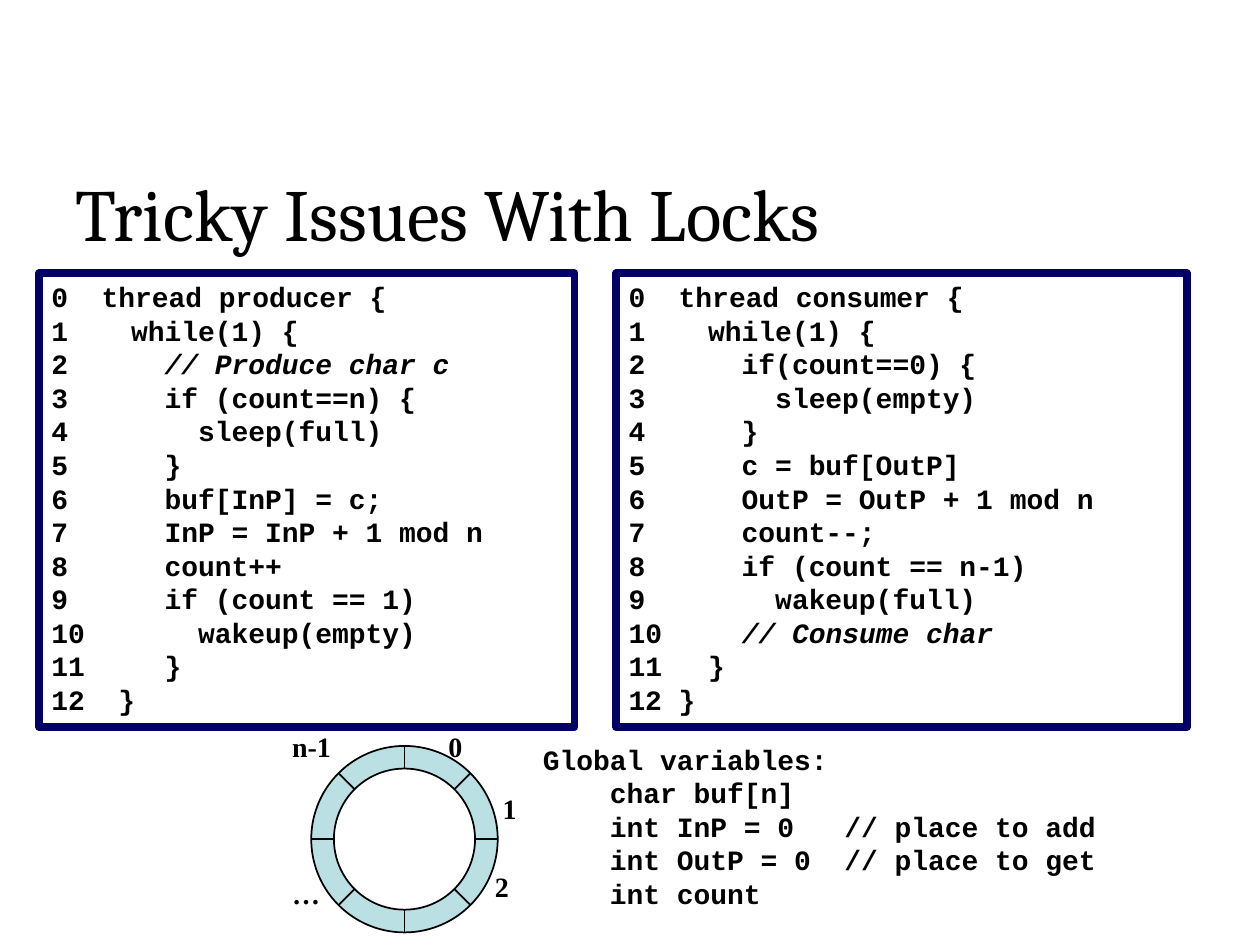
import math
from dataclasses import dataclass

from lxml import etree
from pptx import Presentation
from pptx import util as u
from pptx.dml.color import RGBColor
from pptx.enum import shapes, text
from pptx.oxml.ns import qn


@dataclass(frozen=True)
class Theme:
    ink: RGBColor = RGBColor.from_string("000000")
    frame: RGBColor = RGBColor.from_string("000066")
    ring: RGBColor = RGBColor.from_string("BBE0E3")
    paper: RGBColor = RGBColor.from_string("FFFFFF")
    title_font: str = "Cambria"
    code_font: str = "Courier New"
    label_font: str = "Times New Roman"
    title_size: int = 42
    body_size: int = 16
    frame_width: float = 4.5
    thin_width: float = 1


T = Theme()


def write_text(sp, content, font=T.code_font, size=T.body_size, bold=True,
               anchor=text.MSO_ANCHOR.TOP, spacing=None, numbered=False):
    tf = sp.text_frame
    tf.word_wrap = True
    tf.vertical_anchor = anchor
    lines = content.split("\n")
    for i, line in enumerate(lines):
        p = tf.paragraphs[0] if i == 0 else tf.add_paragraph()
        p.alignment = text.PP_ALIGN.LEFT
        if spacing:
            p.line_spacing = spacing
        pieces = [line]
        if numbered:
            pPr = p._p.get_or_add_pPr()
            pPr.set("marL", str(u.Inches(0.5)))
            pPr.set("indent", str(u.Inches(-0.5)))
            if 0 < i < len(lines) - 1:
                etree.SubElement(pPr, qn("a:buFontTx"))
                etree.SubElement(pPr, qn("a:buAutoNum"), type="arabicPlain")
            code, slashes, comment = line.partition("//")
            pieces = [code, slashes + comment]
        for j, piece in enumerate(pieces):
            if piece:
                r = p.add_run()
                r.text = piece
                r.font.name = font
                r.font.size = u.Pt(size)
                r.font.bold = bold
                r.font.italic = j == 1
                r.font.color.rgb = T.ink


def add_shape(kind, x, y, w, h, fill, line, width):
    sp = s.shapes.add_shape(kind, u.Inches(x), u.Inches(y), u.Inches(w), u.Inches(h))
    sp.shadow.inherit = False
    if fill is None:
        sp.fill.background()
    else:
        sp.fill.solid()
        sp.fill.fore_color.rgb = fill
    sp.line.color.rgb = line
    sp.line.width = u.Pt(width)
    return sp


PRODUCER = """0  thread producer {
 while(1) {
   // Produce char c
   if (count==n) {
     sleep(full)
   }
   buf[InP] = c;
   InP = InP + 1 mod n
   count++
   if (count == 1)
     wakeup(empty)
   }
12  }"""

CONSUMER = """0  thread consumer {
 while(1) {
   if(count==0) {
     sleep(empty)
   }
   c = buf[OutP]
   OutP = OutP + 1 mod n
   count--;
   if (count == n-1)
     wakeup(full)
   // Consume char
 }
12 }"""

GLOBALS = """Global variables:
    char buf[n]
    int InP = 0   // place to add
    int OutP = 0  // place to get
    int count"""

prs = Presentation()
prs.slide_width = u.Inches(10)
prs.slide_height = u.Inches(7.5)
s = prs.slides.add_slide(prs.slide_layouts[6])

title = s.shapes.add_textbox(u.Inches(0.5), u.Inches(1.35), u.Inches(7.92), u.Inches(0.75))
write_text(title, "Tricky Issues With Locks", font=T.title_font, size=T.title_size,
           bold=False, anchor=text.MSO_ANCHOR.MIDDLE, spacing=0.9)

for code, x, w in [(CONSUMER, 4.89, 4.53), (PRODUCER, 0.31, 4.25)]:
    box = add_shape(shapes.MSO_SHAPE.RECTANGLE, x, 2.17, w, 3.6, None, T.frame, T.frame_width)
    write_text(box, code, numbered=True)

cx, cy, outer, inner = 3.21, 6.66, 0.74, 0.56
add_shape(shapes.MSO_SHAPE.OVAL, cx - outer, cy - outer, 2 * outer, 2 * outer,
          T.ring, T.ink, T.thin_width)
for k in range(4):
    dx = outer * math.cos(k * math.pi / 4)
    dy = outer * math.sin(k * math.pi / 4)
    spoke = s.shapes.add_connector(shapes.MSO_CONNECTOR.STRAIGHT,
                                   u.Inches(cx - dx), u.Inches(cy - dy),
                                   u.Inches(cx + dx), u.Inches(cy + dy))
    spoke.line.color.rgb = T.ink
    spoke.line.width = u.Pt(T.thin_width)
    etree.SubElement(spoke._element.spPr, qn("a:effectLst"))
add_shape(shapes.MSO_SHAPE.OVAL, cx - inner, cy - inner, 2 * inner, 2 * inner,
          T.paper, T.ink, T.thin_width)

for label, x, y, w in [("0", 3.46, 5.74, 0.49), ("1", 3.89, 6.23, 0.49),
                       ("2", 3.83, 6.85, 0.49), ("n-1", 2.22, 5.74, 0.81),
                       ("…", 2.22, 6.91, 0.49)]:
    tag = s.shapes.add_textbox(u.Inches(x), u.Inches(y), u.Inches(w), u.Inches(0.37))
    write_text(tag, label, font=T.label_font)

variables = s.shapes.add_textbox(u.Inches(4.21), u.Inches(5.84), u.Inches(5.25), u.Inches(1.45))
write_text(variables, GLOBALS)

prs.save("out.pptx")
